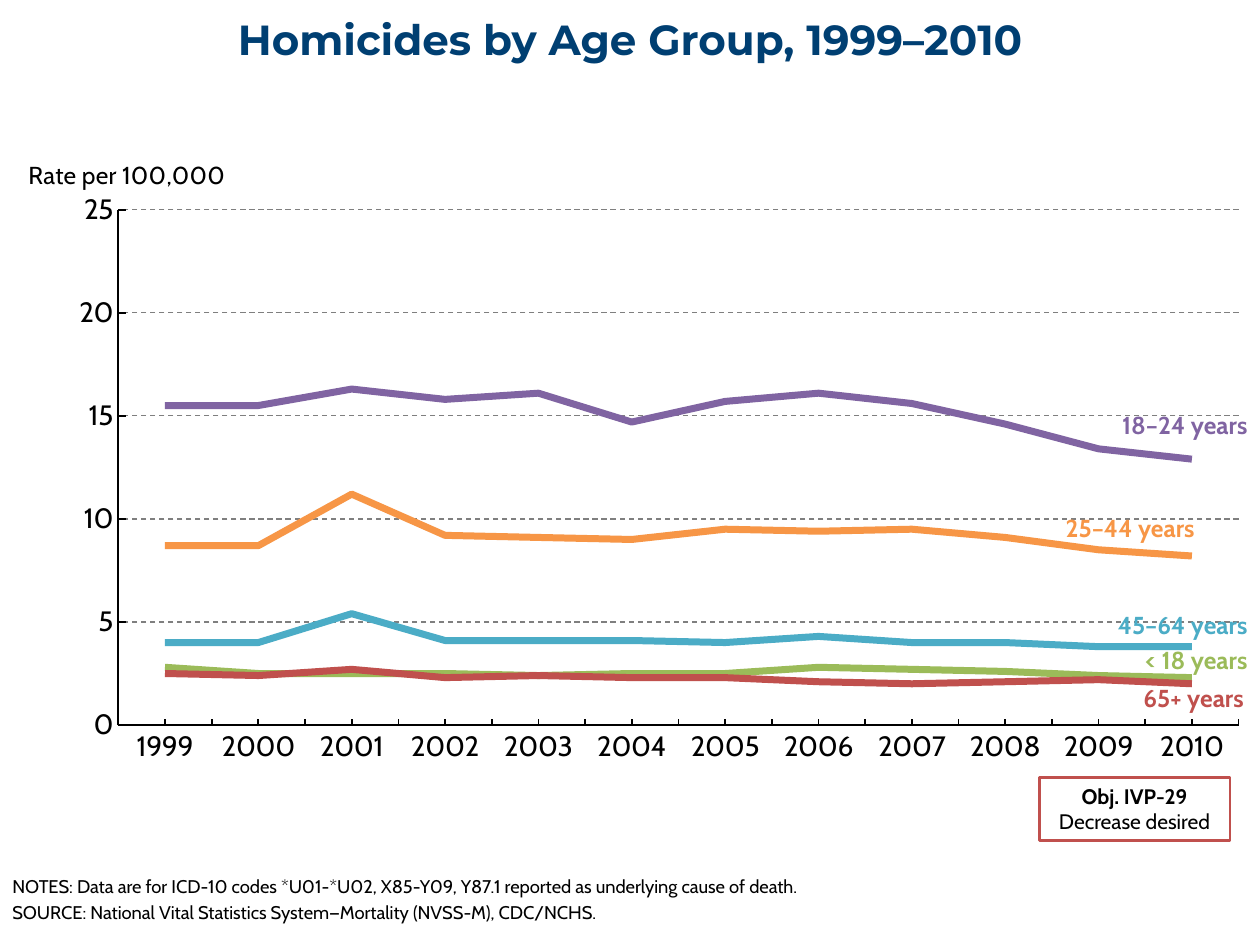
from dataclasses import dataclass

import pptx
import pptx.chart.data
import pptx.dml.color
import pptx.enum.chart
import pptx.enum.dml
import pptx.enum.shapes
import pptx.enum.text
import pptx.oxml
import pptx.oxml.ns
import pptx.util

WIDTH, HEIGHT = pptx.util.Inches(10), pptx.util.Inches(7.5)
COLORS = {
    "title": "003F72", "text": "000000", "grid": "7F7F7F",
    "green": "9BBB59", "purple": "8064A2", "orange": "F79646",
    "blue": "4BACC6", "red": "C0504D",
}
FONT = "Cabin"
ALIGN = pptx.enum.text.PP_ALIGN
ANCHOR = pptx.enum.text.MSO_ANCHOR
TICK = pptx.enum.chart.XL_TICK_MARK
YEARS = [str(year) for year in range(1999, 2011)]


@dataclass
class Area:
    """A rectangle in percent of the slide's width and height."""
    left: float
    top: float
    width: float
    height: float

    def lengths(self) -> tuple[int, int, int, int]:
        return (int(WIDTH * self.left / 100), int(HEIGHT * self.top / 100),
                int(WIDTH * self.width / 100), int(HEIGHT * self.height / 100))


@dataclass
class AgeGroup:
    label: str
    color: str
    rates: list[float]
    area: Area
    align: ALIGN = ALIGN.RIGHT


AGE_GROUPS = [
    AgeGroup("< 18 years", "green",
             [2.8, 2.5, 2.5, 2.5, 2.4, 2.5, 2.5, 2.8, 2.7, 2.6, 2.4, 2.3],
             Area(75.9, 67.33, 24.1, 4.93)),
    AgeGroup("18–24 years", "purple",
             [15.5, 15.5, 16.3, 15.8, 16.1, 14.7, 15.7, 16.1, 15.6, 14.6, 13.4, 12.9],
             Area(83.7, 42.13, 16.3, 5.73)),
    AgeGroup("25–44 years", "orange",
             [8.7, 8.7, 11.2, 9.2, 9.1, 9, 9.5, 9.4, 9.5, 9.1, 8.5, 8.2],
             Area(83.6, 53.2, 15, 5.33), ALIGN.LEFT),
    AgeGroup("45–64 years", "blue",
             [4, 4, 5.4, 4.1, 4.1, 4.1, 4, 4.3, 4, 4, 3.8, 3.8],
             Area(77.8, 63.47, 22.2, 5.2)),
    AgeGroup("65+ years", "red",
             [2.5, 2.4, 2.7, 2.3, 2.4, 2.3, 2.3, 2.1, 2, 2.1, 2.2, 2],
             Area(77.8, 71.73, 21.9, 4.13)),
]


def rgb(name: str) -> pptx.dml.color.RGBColor:
    return pptx.dml.color.RGBColor.from_string(COLORS[name])


def set_font(font, size: float, color: str = "text", bold: bool = False, name: str = FONT) -> None:
    font.name, font.size, font.bold = name, pptx.util.Pt(size), bold
    font.color.rgb = rgb(color)


def set_line(line, color: str, points: float) -> None:
    line.color.rgb = rgb(color)
    line.width = pptx.util.Pt(points)


def set_layout(parent, index: int, **shares: float) -> None:
    """Place a chart part by hand, in shares of the chart's size."""
    for old in parent.xpath("c:layout"):
        parent.remove(old)
    target = '<c:layoutTarget val="inner"/>' if "w" in shares else ""
    modes = "".join(f'<c:{key}Mode val="edge"/>' for key in "xy")
    values = "".join(f'<c:{key} val="{value}"/>' for key, value in shares.items())
    parent.insert(index, pptx.oxml.parse_xml(
        f'<c:layout {pptx.oxml.ns.nsdecls("c")}><c:manualLayout>'
        f"{target}{modes}{values}</c:manualLayout></c:layout>"))


def add_rate_chart(slide) -> None:
    data = pptx.chart.data.CategoryChartData()
    data.categories = YEARS
    for group in AGE_GROUPS:
        data.add_series(group.label, group.rates)
    chart = slide.shapes.add_chart(
        pptx.enum.chart.XL_CHART_TYPE.LINE,
        *Area(-0.1, 15.6, 99.9, 66.67).lengths(), data).chart
    chart.has_legend = chart.has_title = False
    set_font(chart.font, 18, name="Calibri")
    chart.plots[0].vary_by_categories = False
    for series, group in zip(chart.plots[0].series, AGE_GROUPS):
        series.smooth = False
        series.marker.style = pptx.enum.chart.XL_MARKER_STYLE.NONE
        set_line(series.format.line, group.color, 4)

    for axis in (chart.category_axis, chart.value_axis):
        set_font(axis.tick_labels.font, 16)
        set_line(axis.format.line, "text", 1)
    chart.category_axis.major_tick_mark = TICK.NONE
    chart.category_axis.minor_tick_mark = TICK.INSIDE

    rates = chart.value_axis
    rates.minimum_scale, rates.maximum_scale, rates.major_unit = 0, 25, 5
    rates.major_tick_mark, rates.minor_tick_mark = TICK.INSIDE, TICK.NONE
    rates.tick_labels.number_format = "0"
    rates.tick_labels.number_format_is_linked = False
    rates.has_major_gridlines = True
    grid = rates.major_gridlines.format.line
    set_line(grid, "grid", 0.75)
    grid.dash_style = pptx.enum.dml.MSO_LINE.DASH

    frame = rates.axis_title.text_frame
    frame.text = "Rate per 100,000"
    set_font(frame.paragraphs[0].font, 14)
    title = rates.axis_title._element
    for body in title.xpath(".//a:bodyPr"):
        body.set("rot", "0")
        body.set("vert", "horz")
    set_layout(title, 1, x=0.02, y=0.01)
    plot_area = chart._chartSpace.xpath("c:chart/c:plotArea")[0]
    set_layout(plot_area, 0, x=0.095, y=0.099, w=0.89, h=0.818)


def write(frame, lines: list[str], size: float, align: ALIGN, anchor: ANCHOR,
          color: str = "text", bold_lines: int = 0, gap: float = 0, name: str = FONT) -> None:
    """Fill a text frame; the first bold_lines paragraphs are bold."""
    frame.word_wrap = True
    frame.vertical_anchor = anchor
    frame.text = "\n".join(lines)
    for index, para in enumerate(frame.paragraphs):
        para.alignment = align
        para.space_before = pptx.util.Pt(gap if index else 0)
        set_font(para.font, size, color, index < bold_lines, name)


def add_text(slide, area: Area, lines: list[str], size: float, **style) -> None:
    box = slide.shapes.add_textbox(*area.lengths())
    write(box.text_frame, lines, size, **style)


def add_objective(slide) -> None:
    box = slide.shapes.add_shape(pptx.enum.shapes.MSO_SHAPE.RECTANGLE,
                                 *Area(82.5, 82.27, 15.1, 6.67).lengths())
    box.shadow.inherit = False
    box.fill.background()
    set_line(box.line, "red", 1.25)
    write(box.text_frame, ["Obj. IVP-29", "Decrease desired"], 12,
          ALIGN.CENTER, ANCHOR.MIDDLE, bold_lines=1)


def main() -> None:
    deck = pptx.Presentation()
    deck.slide_width, deck.slide_height = WIDTH, HEIGHT
    slide = deck.slides.add_slide(deck.slide_layouts.get_by_name("Title Only"))

    title = slide.shapes.title
    title.left, title.top, title.width, title.height = Area(0, 0, 100, 8.27).lengths()
    write(title.text_frame, ["Homicides by Age Group, 1999–2010"], 24, ALIGN.CENTER,
          ANCHOR.MIDDLE, color="title", bold_lines=1, name="Montserrat")

    add_rate_chart(slide)
    for group in AGE_GROUPS:
        add_text(slide, group.area, [group.label], 14, align=group.align,
                 anchor=ANCHOR.MIDDLE, color=group.color, bold_lines=1)
    add_text(slide, Area(0, 92, 86.7, 8), [
        "NOTES: Data are for ICD-10 codes *U01-*U02, X85-Y09, Y87.1 "
        "reported as underlying cause of death.",
        "SOURCE: National Vital Statistics System—Mortality (NVSS-M), CDC/NCHS.",
    ], 10.5, align=ALIGN.LEFT, anchor=ANCHOR.TOP, gap=2.1)
    add_objective(slide)
    deck.save("out.pptx")


if __name__ == "__main__":
    main()
